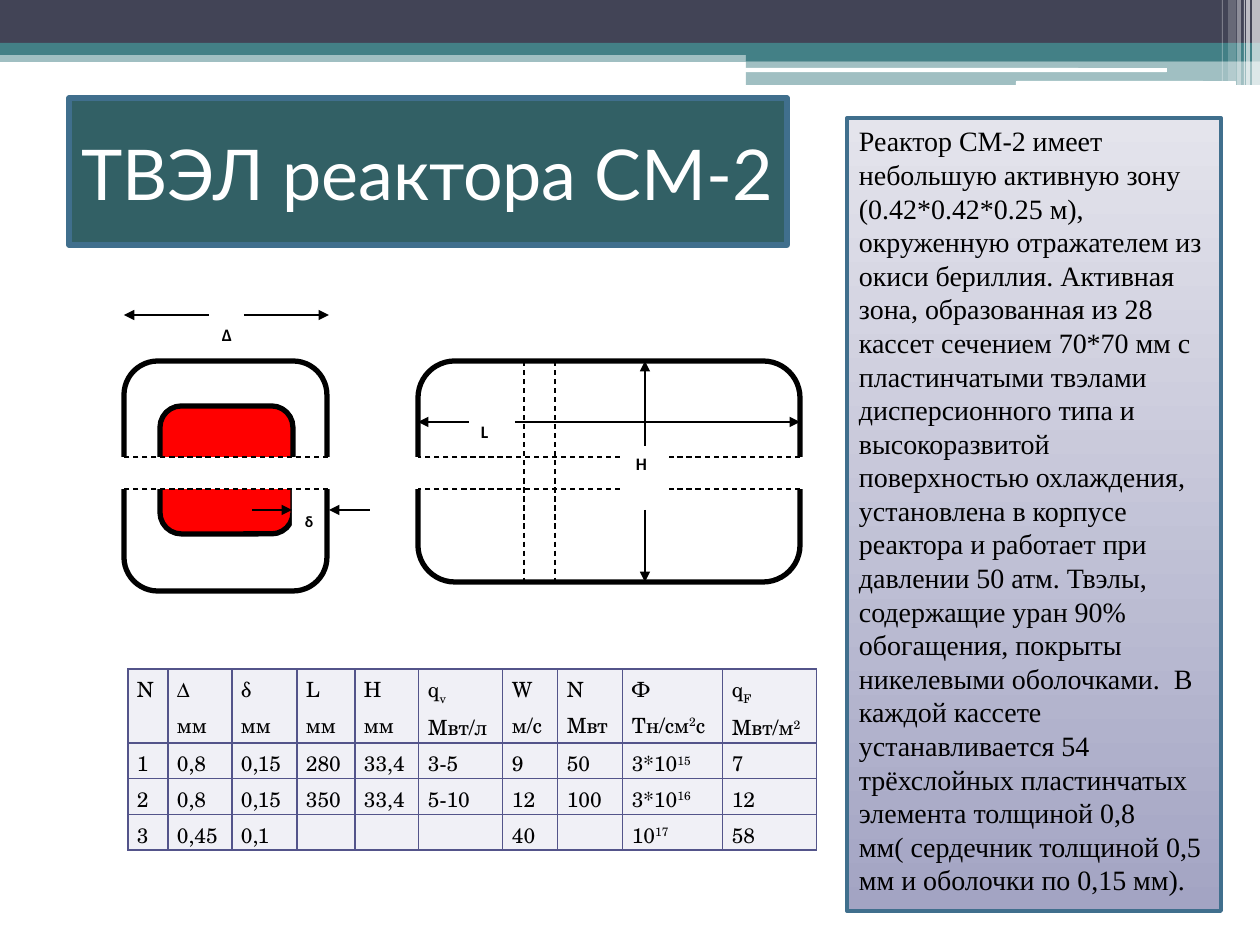
"""Build the slide about the fuel element of the SM-2 reactor."""
import pptx
import pptx.dml.color
import pptx.enum.dml
import pptx.enum.shapes
import pptx.enum.text
import pptx.oxml.ns
import pptx.util
from lxml import etree

RGBColor = pptx.dml.color.RGBColor
SHAPES = pptx.enum.shapes.MSO_SHAPE
ANCHOR = pptx.enum.text.MSO_ANCHOR
ALIGN = pptx.enum.text.PP_ALIGN

SCALE = 914400 / 126
BLACK = RGBColor(0x00, 0x00, 0x00)
WHITE = RGBColor(0xFF, 0xFF, 0xFF)
RED = RGBColor(0xFF, 0x00, 0x00)
NAVY = RGBColor(0x42, 0x44, 0x56)
TEAL = RGBColor(0x43, 0x80, 0x86)
DARK_TEAL = RGBColor(0x32, 0x60, 0x65)
FRAME_BLUE = RGBColor(0x40, 0x6F, 0x8D)
GRID_VIOLET = RGBColor(0x53, 0x54, 0x8A)
CELL_LILAC = RGBColor(0xF0, 0xF0, 0xF6)
GRADIENT = (RGBColor(0xA3, 0xA4, 0xC3), RGBColor(0xE4, 0xE4, 0xEC))

TITLE = "ТВЭЛ реактора СМ-2"
DESCRIPTION = (
    "Реактор СМ-2 имеет небольшую активную зону (0.42*0.42*0.25 м), "
    "окруженную отражателем из окиси бериллия. Активная зона, образованная "
    "из 28 кассет сечением 70*70 мм с пластинчатыми твэлами дисперсионного "
    "типа и высокоразвитой поверхностью охлаждения, установлена в корпусе "
    "реактора и работает при давлении 50 атм. Твэлы, содержащие уран 90% "
    "обогащения, покрыты никелевыми оболочками.  В каждой кассете "
    "устанавливается 54 трёхслойных пластинчатых элемента толщиной 0,8 мм( "
    "сердечник толщиной 0,5 мм и оболочки по 0,15 мм).")

HEADER_BARS = [
    (SHAPES.RECTANGLE, (0, 50, 1260, 12), TEAL, 50),
    (SHAPES.RECTANGLE, (0, 0, 1260, 43), NAVY, 100),
    (SHAPES.RECTANGLE, (0, 43, 1260, 12), TEAL, 100),
    (SHAPES.RECTANGLE, (746, 49, 514, 12), TEAL, 100),
    (SHAPES.RECTANGLE, (746, 60, 514, 25), TEAL, 50),
    (SHAPES.ROUNDED_RECTANGLE, (745, 68, 422, 4), WHITE, 100),
    (SHAPES.ROUNDED_RECTANGLE, (1016, 81, 220, 5), WHITE, 100),
]
HEADER_STRIPES = [(1252, 8, 86, 65), (1246, 4, 86, 65), (1244, 1, 86, 60),
                  (1237, 4, 86, 40), (1228, 8, 81, 20), (1222, 1, 81, 30)]

PLATES = [((124, 361, 203, 230), WHITE), ((160, 406, 133, 128), RED),
          ((418, 361, 382, 221), WHITE)]
CUT_BAND = (108, 457, 709, 32)
CUT_LINES = [(x1, y, x2, y) for x1, x2 in ((328, 124), (800, 418))
             for y in (457, 489)]
SECTION_LINES = [(x, 361, x, 582) for x in (524, 555)]
ARROWS = [(469, 422, 418, 422), (515, 422, 800, 422),
          (645, 446, 645, 361), (645, 510, 645, 582),
          (370, 510, 329, 510), (252, 510, 292, 510),
          (209, 315, 124, 315), (244, 315, 329, 315)]
LABELS = [("L", (469, 381, 56, 76), 12, 40, 10),
          ("H", (620, 446, 49, 64), 16, 7, 10),
          ("δ", (292, 474, 29, 60), 13, 38, 9),
          ("Δ", (209, 286, 29, 60), 13, 38, 10)]

TABLE_LEFT, TABLE_TOP = 128, 669
COLUMN_WIDTHS = [40, 64, 65, 58, 64, 84, 55, 65, 100, 94]
ROW_HEIGHTS = [74, 35, 36, 35]
TABLE_ROWS = [
    ["N", "Δ\nмм", "δ\nмм", "L\nмм", "H\nмм", "q|v|\nМвт/л", "W\nм/с",
     "N\nМвт", "Ф\nТн/см|2|с", "q|F|\nМвт/м|2|"],
    ["1", "0,8", "0,15", "280", "33,4", "3-5", "9", "50", "3*10|15|", "7"],
    ["2", "0,8", "0,15", "350", "33,4", "5-10", "12", "100", "3*10|16|", "12"],
    ["3", "0,45", "0,1", "", "", "", "40", "", "10|17|", "58"],
]


def px(value):
    return round(value * SCALE)


def add_xml(parent, tag, **attributes):
    return etree.SubElement(parent, pptx.oxml.ns.qn(tag), attributes)


def write_text(frame, text, font, size, color=BLACK, bold=False,
               align=ALIGN.LEFT, spacing=1.0, margins=(12, 6, 12, 6),
               anchor=ANCHOR.TOP):
    """Write lines into a frame; parts between bars are sub- or superscript."""
    frame.word_wrap = True
    frame.vertical_anchor = anchor
    (frame.margin_left, frame.margin_top,
     frame.margin_right, frame.margin_bottom) = map(px, margins)
    for index, line in enumerate(text.split("\n")):
        paragraph = frame.add_paragraph() if index else frame.paragraphs[0]
        paragraph.alignment = align
        paragraph.line_spacing = spacing
        for position, part in enumerate(line.split("|")):
            if position and not part:
                continue
            run = paragraph.add_run()
            run.text = part
            run.font.name = font
            run.font.size = pptx.util.Pt(size)
            run.font.bold = bold
            run.font.color.rgb = color
            if position % 2:
                baseline = "30000" if part.isdigit() else "-25000"
                run.font._element.set("baseline", baseline)


def add_box(slide, kind, box, fill, line_width=0, line_color=BLACK, opacity=100):
    shape = slide.shapes.add_shape(kind, *map(px, box))
    shape.shadow.inherit = False
    shape.fill.solid()
    shape.fill.fore_color.rgb = fill
    if opacity < 100:
        color = shape.fill._xPr.find(".//" + pptx.oxml.ns.qn("a:srgbClr"))
        add_xml(color, "a:alpha", val=str(opacity * 1000))
    if line_width:
        shape.line.color.rgb = line_color
        shape.line.width = pptx.util.Pt(line_width)
    else:
        shape.line.fill.background()
    return shape


def add_line(slide, ends, dashed=False, arrow=False):
    connector = slide.shapes.add_connector(
        pptx.enum.shapes.MSO_CONNECTOR.STRAIGHT, *map(px, ends))
    connector.line.color.rgb = BLACK
    connector.line.width = pptx.util.Pt(0.75)
    if dashed:
        connector.line.dash_style = pptx.enum.dml.MSO_LINE.DASH
    if arrow:
        add_xml(connector.line._get_or_add_ln(), "a:tailEnd", type="triangle")
    add_xml(connector._element.spPr, "a:effectLst")


def add_title(slide):
    title = slide.shapes.title
    title.left, title.top, title.width, title.height = map(px, (69, 98, 718, 147))
    title.fill.solid()
    title.fill.fore_color.rgb = DARK_TEAL
    title.line.color.rgb = FRAME_BLUE
    title.line.width = pptx.util.Pt(3)
    write_text(title.text_frame, TITLE, "Lato", 40, color=WHITE,
               align=ALIGN.CENTER, anchor=ANCHOR.MIDDLE, margins=(6, 8, 8, 6))


def add_drawing(slide):
    for box, fill in PLATES:
        add_box(slide, SHAPES.ROUNDED_RECTANGLE, box, fill, line_width=3)
    add_box(slide, SHAPES.RECTANGLE, CUT_BAND, WHITE)
    for text, box, left, top, size in LABELS:
        label = add_box(slide, SHAPES.RECTANGLE, box, WHITE)
        write_text(label.text_frame, text, "Calibri", size, bold=True,
                   margins=(left, top, 0, 0))
    gap_left, gap_right = 620, 669
    for x1, y, x2, _ in CUT_LINES:
        if x2 < gap_left < x1:
            add_line(slide, (x1, y, gap_right, y), dashed=True)
            add_line(slide, (gap_left, y, x2, y), dashed=True)
        else:
            add_line(slide, (x1, y, x2, y), dashed=True)
    for ends in SECTION_LINES:
        add_line(slide, ends, dashed=True)
    for ends in ARROWS:
        add_line(slide, ends, arrow=True)


def add_parameters(slide):
    table = slide.shapes.add_table(
        len(TABLE_ROWS), len(COLUMN_WIDTHS), px(TABLE_LEFT), px(TABLE_TOP),
        px(sum(COLUMN_WIDTHS)), px(sum(ROW_HEIGHTS))).table
    for column, width in zip(table.columns, COLUMN_WIDTHS):
        column.width = px(width)
    for row, height, texts in zip(table.rows, ROW_HEIGHTS, TABLE_ROWS):
        row.height = px(height)
        for cell, text in zip(row.cells, texts):
            write_text(cell.text_frame, text, "TeX Gyre Schola", 12, spacing=1.15)
            cell.margin_left = cell.margin_right = px(9)
            cell.margin_top = cell.margin_bottom = 0
            properties = cell._tc.get_or_add_tcPr()
            for side in ("a:lnL", "a:lnR", "a:lnT", "a:lnB"):
                border = add_xml(properties, side, w="9525")
                add_xml(add_xml(border, "a:solidFill"), "a:srgbClr",
                        val=str(GRID_VIOLET))
            cell.fill.solid()
            cell.fill.fore_color.rgb = CELL_LILAC


def add_description(slide):
    panel = add_box(slide, SHAPES.RECTANGLE, (847, 118, 374, 793), WHITE,
                    line_width=2.25, line_color=FRAME_BLUE)
    panel.fill.gradient()
    panel.fill.gradient_angle = 90
    for stop, color in zip(panel.fill.gradient_stops, GRADIENT):
        stop.color.rgb = color
    write_text(panel.text_frame, DESCRIPTION, "Times New Roman", 16)


def main():
    presentation = pptx.Presentation()
    presentation.slide_width, presentation.slide_height = px(1260), px(945)
    slide = presentation.slides.add_slide(presentation.slide_layouts[5])
    for kind, box, fill, opacity in HEADER_BARS:
        add_box(slide, kind, box, fill, opacity=opacity)
    for left, width, height, opacity in HEADER_STRIPES:
        add_box(slide, SHAPES.RECTANGLE, (left, 0, width, height), WHITE,
                opacity=opacity)
    add_title(slide)
    add_drawing(slide)
    add_parameters(slide)
    add_description(slide)
    presentation.save("out.pptx")


if __name__ == "__main__":
    main()
